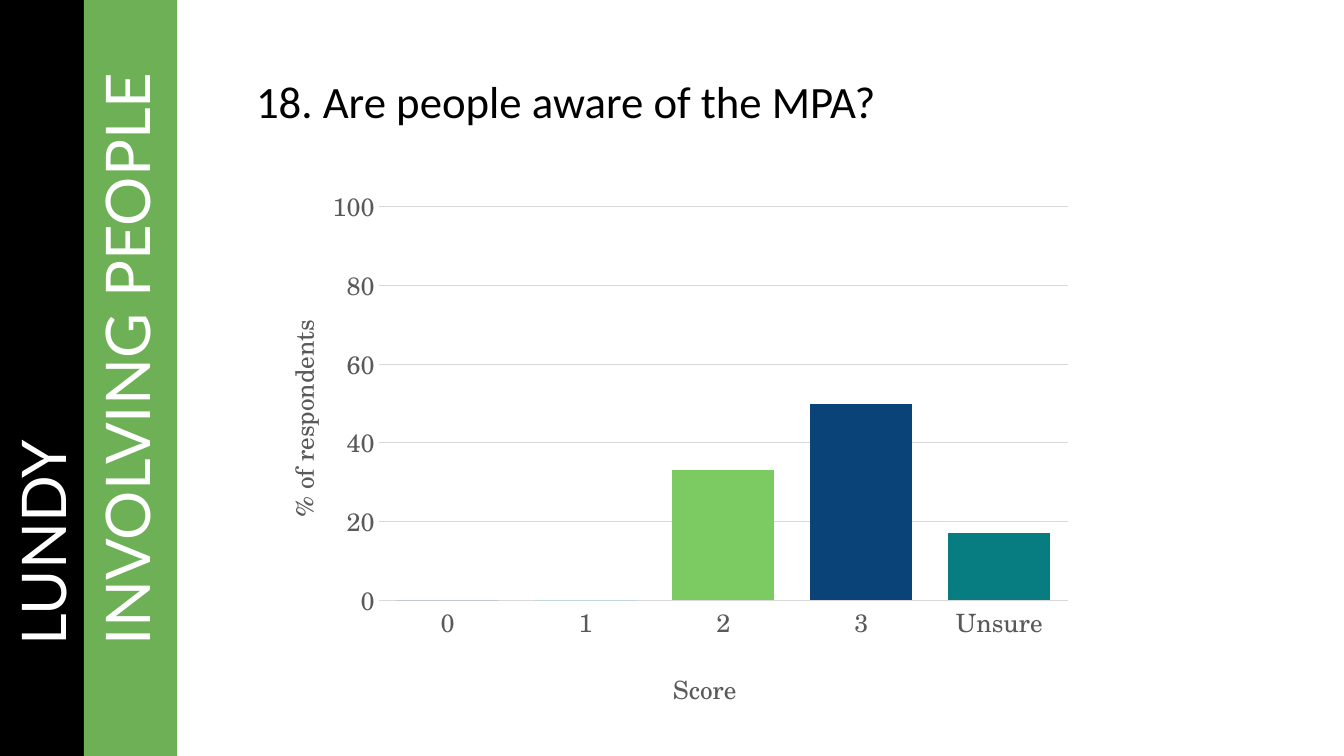
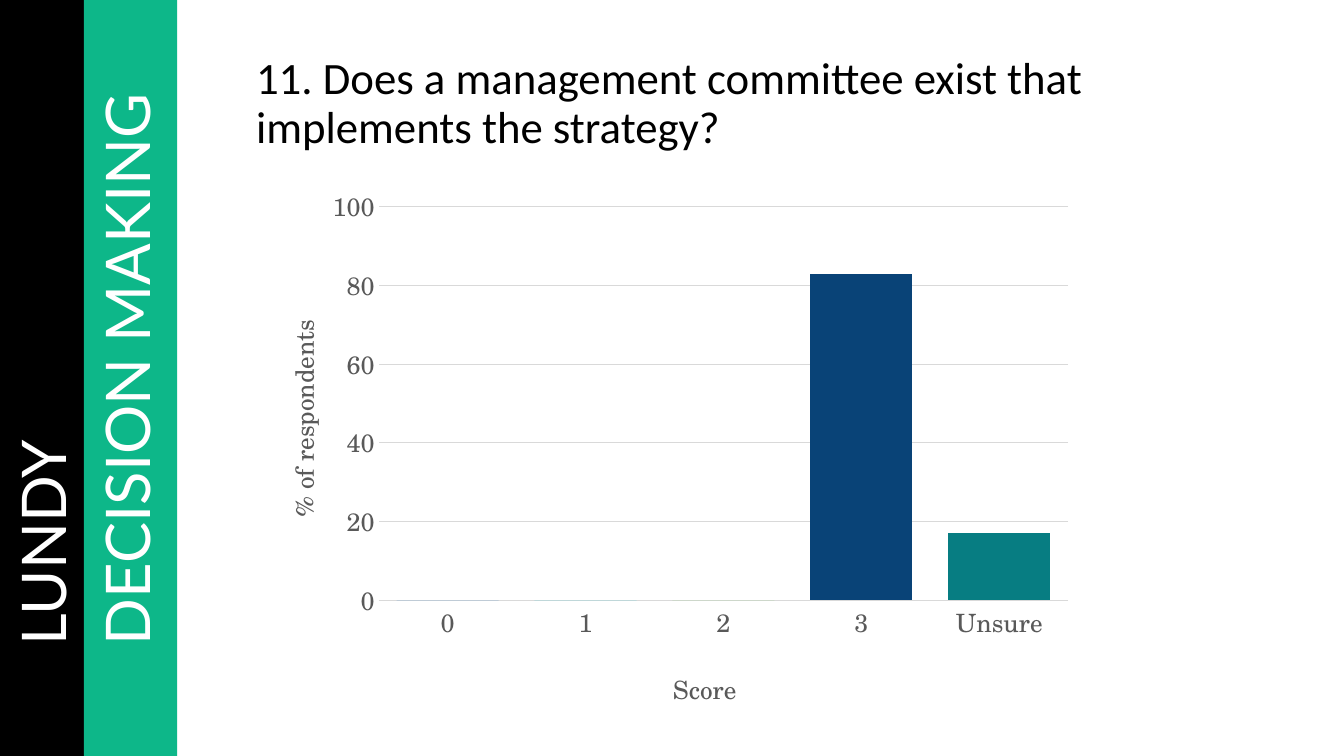
import pptx
import pptx.chart.data
import pptx.dml.color
import pptx.enum.chart
import pptx.enum.shapes
import pptx.enum.text
import pptx.oxml
import pptx.oxml.ns
import pptx.util

Pt = pptx.util.Pt
qn = pptx.oxml.ns.qn

COLORS = {
    "black": "000000", "white": "FFFFFF", "grey": "595959", "grid": "D9D9D9",
    "people": "6DB056", "decision": "0DB789",
    "0": "0F6FC6", "1": "0BD0D9", "2": "7CCA62", "3": "094377", "Unsure": "077D82",
}
FONTS = {"title": "Calibri", "band": "Lato", "chart": "TeX Gyre Schola"}
SITE = "LUNDY"
SCORES = ["0", "1", "2", "3", "Unsure"]
SLIDES = [
    {"title": "18. Are people aware of the MPA?",
     "theme": "INVOLVING PEOPLE", "color": "people", "values": [0, 0, 33, 50, 17]},
    {"title": "11. Does a management committee exist that implements the strategy?",
     "theme": "DECISION MAKING", "color": "decision", "values": [0, 0, 0, 83, 17]},
]

SLIDE_W, SLIDE_H = 960, 540
BAND_W, BAND_STEP = 66.5, 60
CONTENT_X = 175.7
TITLE_BOX = (CONTENT_X, 22.3, 699, 104.4)
CHART_BOX = (CONTENT_X, 126.7, 600, 388)
PLOT_LAYOUT = {"x": 0.158, "y": 0.054, "w": 0.821, "h": 0.725}
SCORE_LAYOUT = {"x": 0.503, "y": 0.895}
RESPONDENTS_LAYOUT = {"x": 0.038, "y": 0.254}


def rgb(name):
    return pptx.dml.color.RGBColor.from_string(COLORS[name])


def style_font(font, face, size, color):
    font.name, font.size, font.bold = face, Pt(size), False
    font.color.rgb = rgb(color)


def style_paragraph(p, face, size, color):
    p.alignment = pptx.enum.text.PP_ALIGN.LEFT
    p.line_spacing = 0.9
    style_font(p.font, face, size, color)


def add_title(slide, text):
    sp = slide.shapes.title
    sp.left, sp.top, sp.width, sp.height = map(Pt, TITLE_BOX)
    tf = sp.text_frame
    tf.text = text
    tf.word_wrap = True
    tf.vertical_anchor = pptx.enum.text.MSO_ANCHOR.MIDDLE
    style_paragraph(tf.paragraphs[0], FONTS["title"], 32, "black")


def add_band(slide, index, text, color):
    center = BAND_W / 2 + index * BAND_STEP
    sp = slide.shapes.add_shape(
        pptx.enum.shapes.MSO_SHAPE.RECTANGLE, Pt(center - SLIDE_H / 2),
        Pt((SLIDE_H - BAND_W) / 2), Pt(SLIDE_H), Pt(BAND_W))
    sp.rotation = 270
    sp.shadow.inherit = False
    sp.fill.solid()
    sp.fill.fore_color.rgb = rgb(color)
    sp.line.fill.background()
    tf = sp.text_frame
    tf.word_wrap = True
    tf.margin_left = Pt(79.2)
    tf.vertical_anchor = pptx.enum.text.MSO_ANCHOR.MIDDLE
    tf.text = text
    style_paragraph(tf.paragraphs[0], FONTS["band"], 44, "white")


def set_layout(element, layout, position):
    old = element.find(qn("c:layout"))
    if old is not None:
        element.remove(old)
    modes = "".join(f'<c:{k}Mode val="edge"/>' for k in "xy")
    values = "".join(f'<c:{k} val="{v}"/>' for k, v in layout.items())
    target = '<c:layoutTarget val="inner"/>' if "w" in layout else ""
    element.insert(position, pptx.oxml.parse_xml(
        f'<c:layout {pptx.oxml.ns.nsdecls("c")}><c:manualLayout>'
        f'{target}{modes}{values}</c:manualLayout></c:layout>'))


def style_axis(axis, title, layout, rotation):
    axis.major_tick_mark = axis.minor_tick_mark = pptx.enum.chart.XL_TICK_MARK.NONE
    style_font(axis.tick_labels.font, FONTS["chart"], 18, "grey")
    tf = axis.axis_title.text_frame
    tf.text = title
    style_font(tf.paragraphs[0].font, FONTS["chart"], 18, "grey")
    element = axis.axis_title._element
    element.find(".//" + qn("a:bodyPr")).set("rot", str(rotation * 60000))
    set_layout(element, layout, 1)


def style_line(line):
    line.color.rgb = rgb("grid")
    line.width = Pt(0.75)


def add_score_chart(slide, values):
    data = pptx.chart.data.CategoryChartData()
    data.categories = SCORES
    data.add_series("Series 1", values)
    chart = slide.shapes.add_chart(
        pptx.enum.chart.XL_CHART_TYPE.COLUMN_CLUSTERED, *map(Pt, CHART_BOX), data).chart
    chart.has_legend = False
    chart.has_title = False
    style_font(chart.font, FONTS["chart"], 18, "black")
    plot = chart.plots[0]
    plot.gap_width, plot.overlap = 35, -2
    plot.vary_by_categories = False
    for i, score in enumerate(SCORES):
        fill = plot.series[0].points[i].format.fill
        fill.solid()
        fill.fore_color.rgb = rgb(score)

    style_axis(chart.category_axis, "Score", SCORE_LAYOUT, 0)
    style_line(chart.category_axis.format.line)
    axis = chart.value_axis
    style_axis(axis, "% of respondents", RESPONDENTS_LAYOUT, -90)
    axis.minimum_scale, axis.maximum_scale, axis.major_unit = 0, 100, 20
    axis.format.line.fill.background()
    style_line(axis.major_gridlines.format.line)
    set_layout(chart._chartSpace.find(".//" + qn("c:plotArea")), PLOT_LAYOUT, 0)


def main():
    prs = pptx.Presentation()
    prs.slide_width, prs.slide_height = Pt(SLIDE_W), Pt(SLIDE_H)
    for content in SLIDES:
        slide = prs.slides.add_slide(prs.slide_layouts[5])
        add_title(slide, content["title"])
        add_score_chart(slide, content["values"])
        add_band(slide, 0, SITE, "black")
        add_band(slide, 1, content["theme"], content["color"])
    prs.save("out.pptx")


if __name__ == "__main__":
    main()
